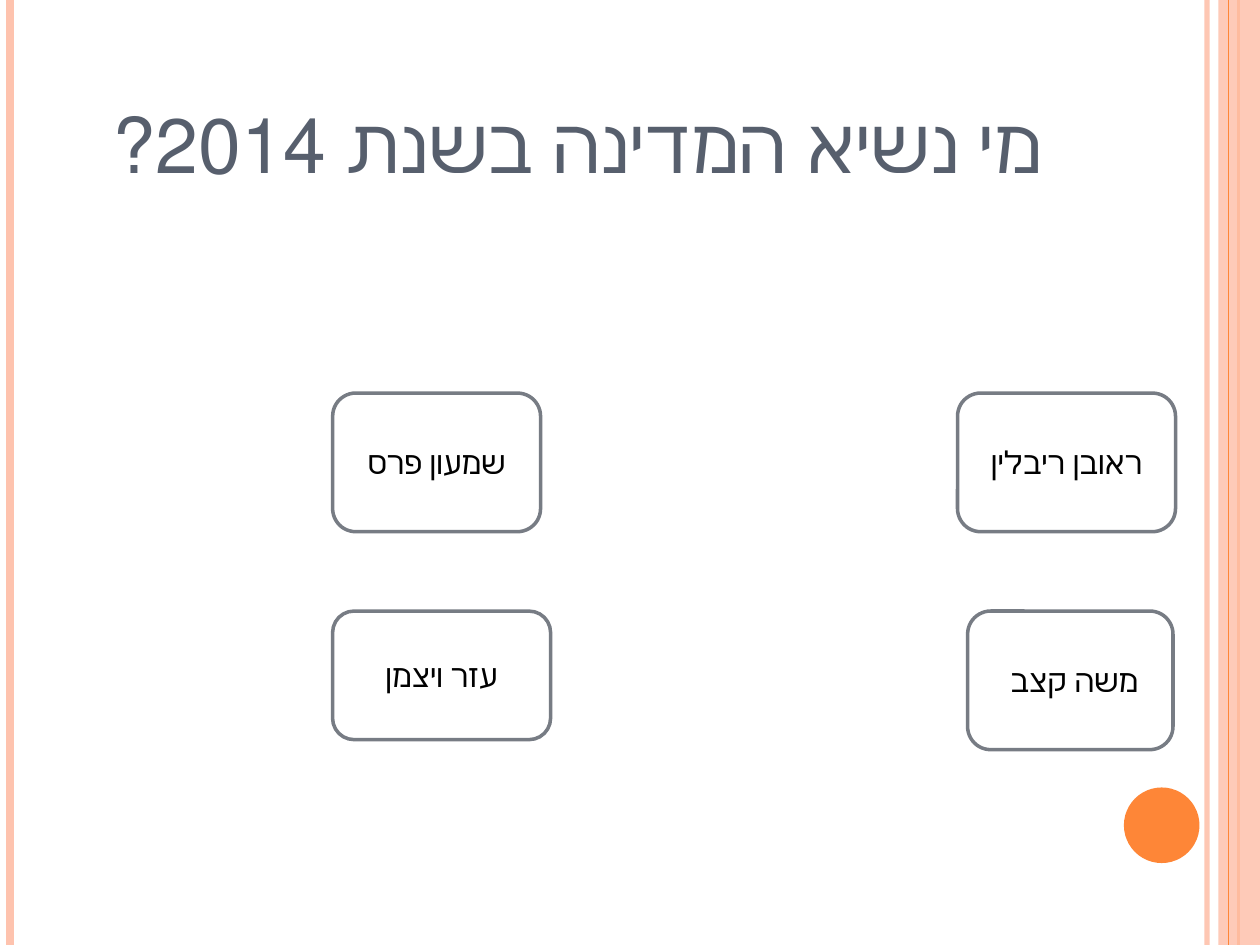
import pptx
import pptx.dml.color
import pptx.enum.shapes
import pptx.enum.text
import pptx.oxml.ns
import pptx.util
from lxml import etree
from pptx.util import Inches

FONT = "Cambria"
SHAPES = pptx.enum.shapes.MSO_SHAPE
ANCHOR = pptx.enum.text.MSO_ANCHOR
PEACH, ORANGE = "FEC3AE", "FE8637"


def color(value):
    return pptx.dml.color.RGBColor.from_string(value)


def set_alpha(element, percent):
    """Make the solid colour inside a shape's properties translucent."""
    rgb = element.find(".//" + pptx.oxml.ns.qn("a:srgbClr"))
    alpha = etree.SubElement(rgb, pptx.oxml.ns.qn("a:alpha"))
    alpha.set("val", str(percent * 1000))


def format_text(frame, text, size, hex_color, anchor):
    """Write one centred right-to-left paragraph."""
    frame.word_wrap = True
    frame.vertical_anchor = anchor
    paragraph = frame.paragraphs[0]
    paragraph.text = text
    paragraph.alignment = pptx.enum.text.PP_ALIGN.CENTER
    paragraph._p.get_or_add_pPr().set("rtl", "1")
    paragraph.font.name = FONT
    paragraph.font.size = pptx.util.Pt(size)
    paragraph.font.color.rgb = color(hex_color)
    return paragraph


def add_filled_shape(slide, kind, box, fill):
    shape = slide.shapes.add_shape(kind, *map(Inches, box))
    shape.shadow.inherit = False
    shape.fill.solid()
    shape.fill.fore_color.rgb = color(fill)
    shape.line.fill.background()
    return shape


def add_stripe(slide, x, top, height, hex_color, width, opacity=100):
    line = slide.shapes.add_connector(
        pptx.enum.shapes.MSO_CONNECTOR.STRAIGHT,
        Inches(x), Inches(top), Inches(x), Inches(top + height))
    line.line.color.rgb = color(hex_color)
    line.line.width = pptx.util.Pt(width)
    properties = line._element.spPr
    if opacity < 100:
        set_alpha(properties, opacity)
    etree.SubElement(properties, pptx.oxml.ns.qn("a:effectLst"))


def add_frame(slide, left, top, width, height):
    """Vertical stripes along both edges and the round accent."""
    right = left + width
    add_stripe(slide, right - 0.42, top, height, PEACH, 3, 93)
    add_stripe(slide, left + 0.08, top, height, PEACH, 4.5)
    add_stripe(slide, right - 0.17, top, height, ORANGE, 1.5)
    band = add_filled_shape(slide, SHAPES.RECTANGLE,
                            (right - 0.33, top, 0.33, height), PEACH)
    set_alpha(band._element.spPr, 87)
    add_stripe(slide, right - 0.25, top, height, ORANGE, 0.75)
    add_filled_shape(slide, SHAPES.OVAL,
                     (right - 1.08, top + height - 1.25, 0.6, 0.6), ORANGE)


def add_question(slide, text, left, top, width, height):
    title = slide.shapes.title
    title.left, title.top = Inches(left), Inches(top)
    title.width, title.height = Inches(width), Inches(height)
    paragraph = format_text(title.text_frame, text, 44, "575F6D", ANCHOR.BOTTOM)
    paragraph.font._element.set("cap", "small")


def add_answer(slide, text, left, top, width, height):
    answer = add_filled_shape(slide, SHAPES.FLOWCHART_ALTERNATE_PROCESS,
                              (left, top, width, height), "FFFFFF")
    answer.line.color.rgb = color("777C84")
    answer.line.width = pptx.util.Pt(2)
    format_text(answer.text_frame, text, 18, "000000", ANCHOR.MIDDLE)


def main():
    presentation = pptx.Presentation()
    presentation.slide_width = Inches(10)
    presentation.slide_height = Inches(7.5)
    slide = presentation.slides.add_slide(presentation.slide_layouts[5])

    add_frame(slide, 0, 0, 10, 7.5)
    add_question(slide, "מי נשיא המדינה בשנת 2014?", 0.5, 0.3, 8.17, 1.25)

    # Answer choices, two rows of hand-sized boxes
    upper, lower = 3.12, 4.85
    answers = [
        ("שמעון פרס", 2.64, upper, 1.65, 1.1),
        ("עזר ויצמן", 2.64, lower, 1.73, 1.02),
        ("ראובן ריבלין", 7.6, upper, 1.73, 1.1),
        ("משה קצב ", 7.68, lower, 1.63, 1.1),
    ]
    for answer in answers:
        add_answer(slide, *answer)

    presentation.save("out.pptx")


if __name__ == "__main__":
    main()
